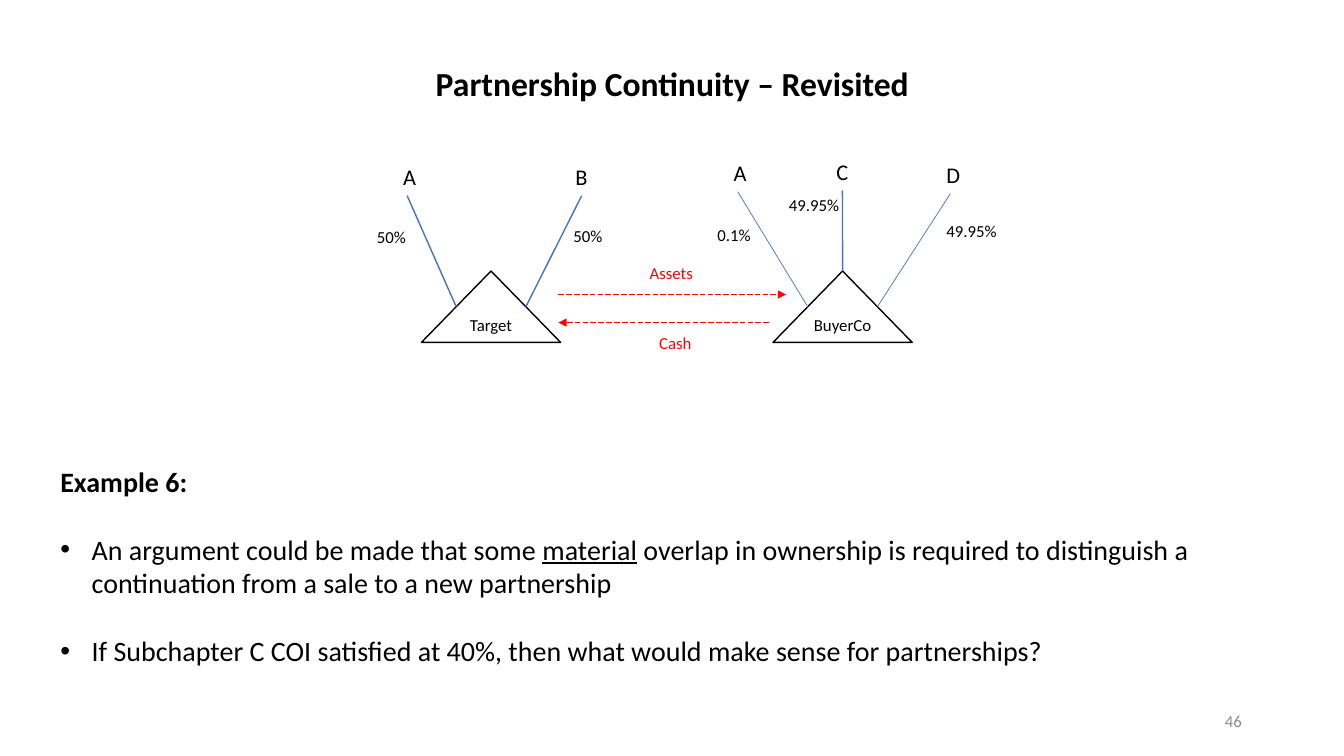
from lxml.etree import SubElement
from pptx import Presentation
from pptx.dml.color import RGBColor
from pptx.enum.dml import MSO_LINE
from pptx.enum.shapes import MSO_CONNECTOR, MSO_SHAPE
from pptx.enum.text import MSO_ANCHOR, MSO_AUTO_SIZE, PP_ALIGN
from pptx.oxml.ns import qn
from pptx.util import Cm, Pt

BLACK, RED, BLUE, GRAY = "000000", "FF0000", "4472C4", "8C8C8C"
TRIANGLE_TOP, TRIANGLE_WIDTH, TRIANGLE_HEIGHT = 6.83, 3.51, 1.8
TARGET_LEFT, BUYER_LEFT = 10.62, 19.48
BODY_INDENT = 0.79


def color(hex_string):
    """Turn a hex string into a colour."""
    return RGBColor.from_string(hex_string)


def format_paragraph(paragraph, size, hex_string=BLACK, align=PP_ALIGN.LEFT, bold=False):
    """Set the font and alignment of a paragraph."""
    font = paragraph.font
    font.name, font.size, font.bold = "Calibri", Pt(size), bold
    font.color.rgb = color(hex_string)
    paragraph.alignment = align


def add_label(slide, text, left, top, width, height, size, **style):
    """Add a one-paragraph text box."""
    box = slide.shapes.add_textbox(Cm(left), Cm(top), Cm(width), Cm(height))
    frame = box.text_frame
    frame.word_wrap = True
    frame.text = text
    format_paragraph(frame.paragraphs[0], size, **style)
    return box


def add_line(slide, start, end, hex_string, width):
    """Add a straight line without a shadow."""
    points = [Cm(value) for value in (*start, *end)]
    connector = slide.shapes.add_connector(MSO_CONNECTOR.STRAIGHT, *points)
    connector.line.color.rgb = color(hex_string)
    connector.line.width = Pt(width)
    SubElement(connector.element.spPr, qn("a:effectLst"))
    return connector


def add_transfer(slide, start, end):
    """Add a dashed red arrow."""
    arrow = add_line(slide, start, end, RED, 0.5)
    arrow.line.dash_style = MSO_LINE.LONG_DASH
    SubElement(arrow.element.spPr.find(qn("a:ln")), qn("a:tailEnd"), type="triangle")


def add_partnership(slide, name, left):
    """Add a named triangle."""
    triangle = slide.shapes.add_shape(
        MSO_SHAPE.ISOSCELES_TRIANGLE,
        Cm(left), Cm(TRIANGLE_TOP), Cm(TRIANGLE_WIDTH), Cm(TRIANGLE_HEIGHT))
    triangle.shadow.inherit = False
    triangle.fill.background()
    triangle.line.color.rgb = color(BLACK)
    triangle.line.width = Pt(1)
    frame = triangle.text_frame
    frame.word_wrap = False
    frame.vertical_anchor = MSO_ANCHOR.MIDDLE
    frame.text = name
    format_paragraph(frame.paragraphs[0], 12, align=PP_ALIGN.CENTER)


def triangle_point(left, across):
    """Return the point on a triangle's sides at a fraction of its width."""
    depth = abs(across - 0.5) * 2
    return left + TRIANGLE_WIDTH * across, TRIANGLE_TOP + TRIANGLE_HEIGHT * depth


def add_owner(slide, name, name_at, line_from, share, share_at, partnership, line_width):
    """Add an owner, its share and the line to its partnership."""
    add_line(slide, triangle_point(*partnership), line_from, BLUE, line_width)
    add_label(slide, name, *name_at, 0.84, 0.94, 16)
    add_label(slide, share, *share_at, 2.13, 0.77, 12)


def add_title(slide, text):
    """Place and format the title placeholder."""
    title = slide.shapes.title
    title.left, title.top, title.width, title.height = Cm(2.34), Cm(1.47), Cm(29.21), Cm(1.7)
    frame = title.text_frame
    frame.text = text
    frame.auto_size = MSO_AUTO_SIZE.NONE
    frame.vertical_anchor = MSO_ANCHOR.TOP
    format_paragraph(frame.paragraphs[0], 24, align=PP_ALIGN.CENTER, bold=True)


def add_bullet(frame, runs):
    """Add a bulleted paragraph from pairs of text and underline."""
    paragraph = frame.add_paragraph()
    for text, underline in runs:
        run = paragraph.add_run()
        run.text = text
        if underline:
            run.font.underline = True
    format_paragraph(paragraph, 20)
    paragraph.space_before = Pt(24.4)
    properties = paragraph._p.get_or_add_pPr()
    properties.set("marL", str(Cm(BODY_INDENT)))
    properties.set("indent", str(-Cm(BODY_INDENT)))
    bullet_font = SubElement(properties, qn("a:buFont"), typeface="Arial")
    bullet_font.addnext(properties.makeelement(qn("a:buChar"), {"char": "•"}))
    properties.append(properties.find(qn("a:defRPr")))


def main():
    """Build the slide."""
    presentation = Presentation()
    presentation.slide_width, presentation.slide_height = Cm(33.87), Cm(19.05)
    slide = presentation.slides.add_slide(presentation.slide_layouts[5])
    add_title(slide, "Partnership Continuity – Revisited")

    add_partnership(slide, "Target", TARGET_LEFT)
    add_partnership(slide, "BuyerCo", BUYER_LEFT)
    owners = [
        ("A", (9.91, 3.99), (10.26, 4.93), "50%", (9.25, 5.59), (TARGET_LEFT, 0.25), 1),
        ("B", (14.25, 3.99), (14.66, 4.93), "50%", (14.2, 5.56), (TARGET_LEFT, 0.75), 1),
        ("A", (18.24, 3.89), (18.59, 4.83), "0.1%", (17.83, 5.54), (BUYER_LEFT, 0.25), 0.5),
        ("C", (20.83, 3.86), (21.23, 4.8), "49.95%", (19.63, 4.78), (BUYER_LEFT, 0.5), 1),
        ("D", (23.6, 3.94), (23.95, 4.88), "49.95%", (23.6, 5.44), (BUYER_LEFT, 0.75), 0.5),
    ]
    for owner in owners:
        add_owner(slide, *owner)

    add_transfer(slide, (14.07, 7.42), (19.81, 7.42))
    add_transfer(slide, (19.38, 8.13), (14.07, 8.13))
    for text, left, top in (("Assets", 15.72, 6.5), ("Cash", 15.82, 8.26)):
        add_label(slide, text, left, top, 2.4, 0.77, 12,
                  hex_string=RED, align=PP_ALIGN.CENTER)

    body = add_label(slide, "Example 6:", 1.27, 11.58, 31.37, 5.38, 20, bold=True).text_frame
    add_bullet(body, [
        ("An argument could be made that some ", False),
        ("material", True),
        (" overlap in ownership is required to distinguish a continuation"
         " from a sale to a new partnership", False),
    ])
    add_bullet(body, [
        ("If Subchapter C COI satisfied at 40%, then what would make sense for partnerships?", False),
    ])

    number = add_label(slide, "46", 23.93, 17.65, 7.62, 1.02, 12,
                       hex_string=GRAY, align=PP_ALIGN.RIGHT)
    number.text_frame.vertical_anchor = MSO_ANCHOR.MIDDLE
    presentation.save("out.pptx")


if __name__ == "__main__":
    main()
